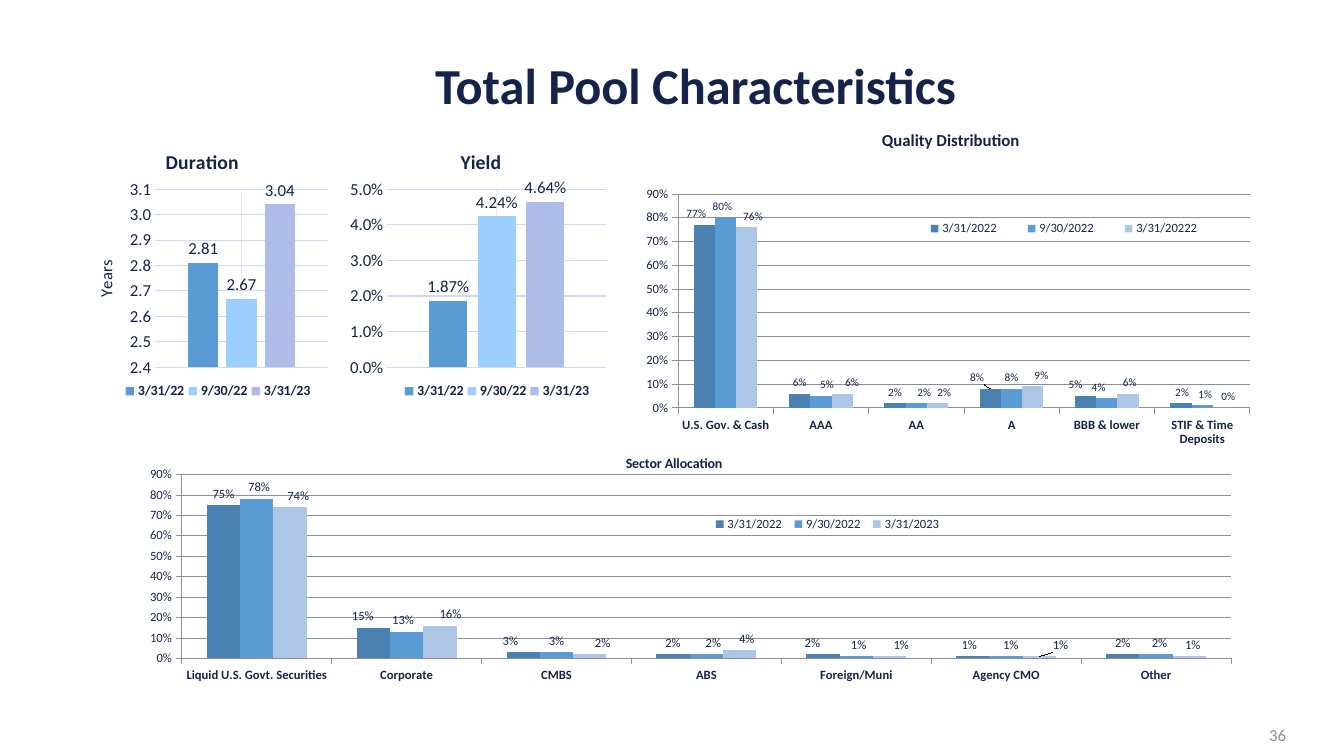
from dataclasses import dataclass
from typing import Optional

from lxml.etree import SubElement
from pptx import Presentation
from pptx.chart.chart import Chart
from pptx.chart.data import CategoryChartData
from pptx.dml.color import RGBColor
from pptx.enum.chart import XL_CHART_TYPE, XL_LABEL_POSITION, XL_LEGEND_POSITION, XL_TICK_MARK
from pptx.enum.text import MSO_ANCHOR, PP_ALIGN
from pptx.oxml import parse_xml
from pptx.oxml.ns import nsdecls, qn
from pptx.slide import Slide
from pptx.text.text import Font
from pptx.util import Cm, Pt


@dataclass(frozen=True)
class Theme:
    font: str = "Calibri"
    ink: str = "15234A"
    muted: str = "8C8D96"
    pale_grid: str = "CFD8F1"
    faint_grid: str = "E6EBF8"
    wide_bars: tuple[str, ...] = ("4B81B1", "5B9BD5", "ADC6E5")
    small_bars: tuple[str, ...] = ("5B9BD5", "9CCFFE", "AEBDE8")
    title_size: float = 36
    number_size: float = 12
    small_title_size: float = 14
    small_text_size: float = 12
    small_legend_size: float = 10
    wide_text_size: float = 9


@dataclass(frozen=True)
class Period:
    """One series; shifts move its labels sideways, in percent of chart width."""
    name: str
    values: tuple[float, ...]
    shifts: tuple[float, ...] = ()


@dataclass(frozen=True)
class BarChart:
    """Box is in centimetres; plot, legend and title places are in percent of it."""
    title: str
    title_size: float
    box: tuple[float, float, float, float]
    title_at: tuple[float, ...]
    plot_at: tuple[float, ...]
    legend_at: tuple[float, ...]
    categories: tuple[str, ...]
    periods: tuple[Period, ...]
    scale: tuple[float, float, float]
    axis_format: str = "0%"
    label_format: str = "0%"
    label_size: float = 9
    small: bool = False
    axis_title: Optional[str] = None


THEME = Theme()
SMALL_DATES = ("3/31/22", "9/30/22", "3/31/23")


def small_chart(title: str, left: float, width: float, values: tuple[float, ...],
                **details) -> BarChart:
    periods = tuple(Period(date, (value,)) for date, value in zip(SMALL_DATES, values))
    return BarChart(title, THEME.small_title_size, (left, 3.18, width, 7.26),
                    categories=("1",), periods=periods, label_size=THEME.small_text_size,
                    legend_at=(21, 89, 72, 6), small=True, **details)


CHARTS = (
    BarChart(
        "Sector Allocation", 10, (2.31, 11, 29.51, 7.54),
        (45.4, 5.2), (7.7, 12.7, 89.6, 61.5), (52.6, 26, 20.5, 6.5),
        ("Liquid U.S. Govt. Securities", "Corporate", "CMBS", "ABS", "Foreign/Muni",
         "Agency CMO", "Other"),
        (Period("3/31/2022", (0.75, 0.15, 0.03, 0.02, 0.02, 0.01, 0.02),
                (0, -0.9, -1.1, 0, -0.9, -0.3, 0)),
         Period("9/30/2022", (0.78, 0.13, 0.03, 0.02, 0.01, 0.01, 0.02),
                (0.2, -0.3, 0, 0.6, 0.2, 0.4, 0.3)),
         Period("3/31/2023", (0.74, 0.16, 0.02, 0.04, 0.01, 0.01, 0.01),
                (0.7, 0.9, 1.1, 0.6, 1, 1.8, 0.3))),
        (0, 0.9, 0.1)),
    BarChart(
        "Quality Distribution", 12, (15.98, 2.72, 15.82, 8.74),
        (39, 5), (7, 24.8, 91.1, 61.7), (43, 31.8, 51, 6),
        ("U.S. Gov. & Cash", "AAA", "AA", "A", "BBB & lower", "STIF & Time Deposits"),
        (Period("3/31/2022", (0.77, 0.06, 0.02, 0.08, 0.05, 0.02),
                (-1.3, 0, 0, -2.1, -1.6, 0.2)),
         Period("9/30/2022", (0.8, 0.05, 0.02, 0.08, 0.04, 0.01),
                (-0.5, 1, 1.3, 0, -1.3, 0.5)),
         Period("3/31/20222", (0.76, 0.06, 0.02, 0.09, 0.06, 0),
                (1, 1.6, 1.1, 1.4, 0.3, 0.8))),
        (0, 0.9, 0.1), label_size=8),
    small_chart("Duration", 1.63, 6.78, (2.81, 2.67, 3.04), scale=(2.4, 3.1, 0.1),
                title_at=(36.2, 6.5), plot_at=(33.6, 21.9, 64.3, 61.8),
                axis_format="0.0", label_format="0.00", axis_title="Years"),
    small_chart("Yield", 8.69, 6.73, (0.0187, 0.0424, 0.0464), scale=(0, 0.05, 0.01),
                title_at=(42, 6.5), plot_at=(15.9, 21.9, 82, 61.8),
                axis_format="0.0%", label_format="0.00%"),
)


def style(font: Font, size: float, color: str = THEME.ink, bold: bool = False) -> None:
    font.name, font.size, font.bold = THEME.font, Pt(size), bold
    font.color.rgb = RGBColor.from_string(color)


def place(parent, index: int, percents: tuple[float, ...], absolute: bool = True) -> None:
    """Give a chart part a manual layout, inserted at its place in the schema order."""
    for old in parent.findall(qn("c:layout")):
        parent.remove(old)
    layout = parse_xml(f"<c:layout {nsdecls('c')}><c:manualLayout/></c:layout>")
    settings = [("layoutTarget", "inner")] if parent.tag == qn("c:plotArea") else []
    if absolute:
        settings += [("xMode", "edge"), ("yMode", "edge")]
    settings += [(key, f"{part / 100:.3f}") for key, part in zip("xywh", percents)]
    for key, value in settings:
        SubElement(layout[0], qn(f"c:{key}")).set("val", value)
    parent.insert(index, layout)


def style_axes(chart: Chart, details: BarChart) -> None:
    values, categories = chart.value_axis, chart.category_axis
    values.minimum_scale, values.maximum_scale, values.major_unit = details.scale
    values.tick_labels.number_format = details.axis_format
    values.tick_labels.number_format_is_linked = False
    style(values.tick_labels.font,
          THEME.small_text_size if details.small else THEME.wide_text_size)
    grid = values.major_gridlines.format.line
    grid.color.rgb = RGBColor.from_string(THEME.pale_grid if details.small else THEME.muted)
    grid.width = Pt(0.75 if details.small else 0.5)
    if details.small:
        values.major_tick_mark = XL_TICK_MARK.NONE
        values.format.line.fill.background()
        categories.has_minor_gridlines = True
        chart.element.xpath(".//c:catAx/c:minorGridlines")[0].append(parse_xml(
            f'<c:spPr {nsdecls("c", "a")}><a:ln w="9525"><a:solidFill>'
            f'<a:srgbClr val="{THEME.faint_grid}"/></a:solidFill></a:ln></c:spPr>'))
        categories.visible = False
    else:
        style(categories.tick_labels.font, THEME.wide_text_size, bold=True)
        for axis in (values, categories):
            axis.major_tick_mark = XL_TICK_MARK.OUTSIDE
            axis.format.line.color.rgb = RGBColor.from_string(THEME.muted)
            axis.format.line.width = Pt(0.5)
    if details.axis_title:
        frame = values.axis_title.text_frame
        frame.text = details.axis_title
        style(frame.paragraphs[0].runs[0].font, THEME.small_text_size)
        place(chart.element.xpath(".//c:valAx/c:title")[0], 1, (10, 45.5))


def style_bars(chart: Chart, details: BarChart) -> None:
    plot = chart.plots[0]
    plot.vary_by_categories = False
    plot.gap_width, plot.overlap = (219, -27) if details.small else (150, 0)
    colors = THEME.small_bars if details.small else THEME.wide_bars
    moved = []
    for series, period, color in zip(plot.series, details.periods, colors):
        series.format.fill.solid()
        series.format.fill.fore_color.rgb = RGBColor.from_string(color)
        labels = series.data_labels
        labels.show_value = True
        labels.number_format, labels.number_format_is_linked = details.label_format, False
        labels.position = XL_LABEL_POSITION.OUTSIDE_END
        style(labels.font, details.label_size)
        for index, shift in enumerate(period.shifts):
            if shift:
                label = series.points[index].data_label
                style(label.font, details.label_size)
                label.position = XL_LABEL_POSITION.OUTSIDE_END
                moved.append(shift)
    for label, shift in zip(chart.element.xpath(".//c:dLbl"), moved):
        place(label, 1, (shift, 0), absolute=False)


def draw_chart(page: Slide, details: BarChart) -> None:
    data = CategoryChartData(number_format=details.label_format)
    data.categories = details.categories
    for period in details.periods:
        data.add_series(period.name, period.values)
    chart = page.shapes.add_chart(XL_CHART_TYPE.COLUMN_CLUSTERED,
                                  *map(Cm, details.box), data).chart
    style(chart.font, THEME.wide_text_size)
    title = chart.chart_title.text_frame
    title.text = details.title
    style(title.paragraphs[0].runs[0].font, details.title_size, bold=True)
    chart.has_legend = True
    chart.legend.position = XL_LEGEND_POSITION.BOTTOM
    chart.legend.include_in_layout = False
    style(chart.legend.font, THEME.small_legend_size if details.small
          else THEME.wide_text_size, bold=details.small)
    style_axes(chart, details)
    style_bars(chart, details)
    for part, index, percents in (("title", 1, details.title_at),
                                  ("plotArea", 0, details.plot_at),
                                  ("legend", 1, details.legend_at)):
        place(chart.element.xpath(f"c:chart/c:{part}")[0], index, percents)


def draw_text(page: Slide, text: str, box: tuple[float, float, float, float], size: float,
              color: str, align: PP_ALIGN, bold: bool = False) -> None:
    frame = page.shapes.add_textbox(*map(Cm, box)).text_frame
    frame.word_wrap, frame.vertical_anchor = True, MSO_ANCHOR.MIDDLE
    frame.text = text
    paragraph = frame.paragraphs[0]
    paragraph.alignment, paragraph.line_spacing = align, 0.9 if bold else 1.0
    style(paragraph.runs[0].font, size, color, bold)


def main() -> None:
    deck = Presentation()
    deck.slide_width, deck.slide_height = Cm(33.87), Cm(19.05)
    page = deck.slides.add_slide(deck.slide_layouts[6])
    draw_text(page, "Total Pool Characteristics", (5.28, 1.85, 24.51, 0.74),
              THEME.title_size, THEME.ink, PP_ALIGN.CENTER, bold=True)
    for details in CHARTS:
        draw_chart(page, details)
    draw_text(page, "36", (25.04, 18.01, 7.62, 1.02), THEME.number_size, THEME.muted,
              PP_ALIGN.RIGHT)
    deck.save("out.pptx")


if __name__ == "__main__":
    main()
